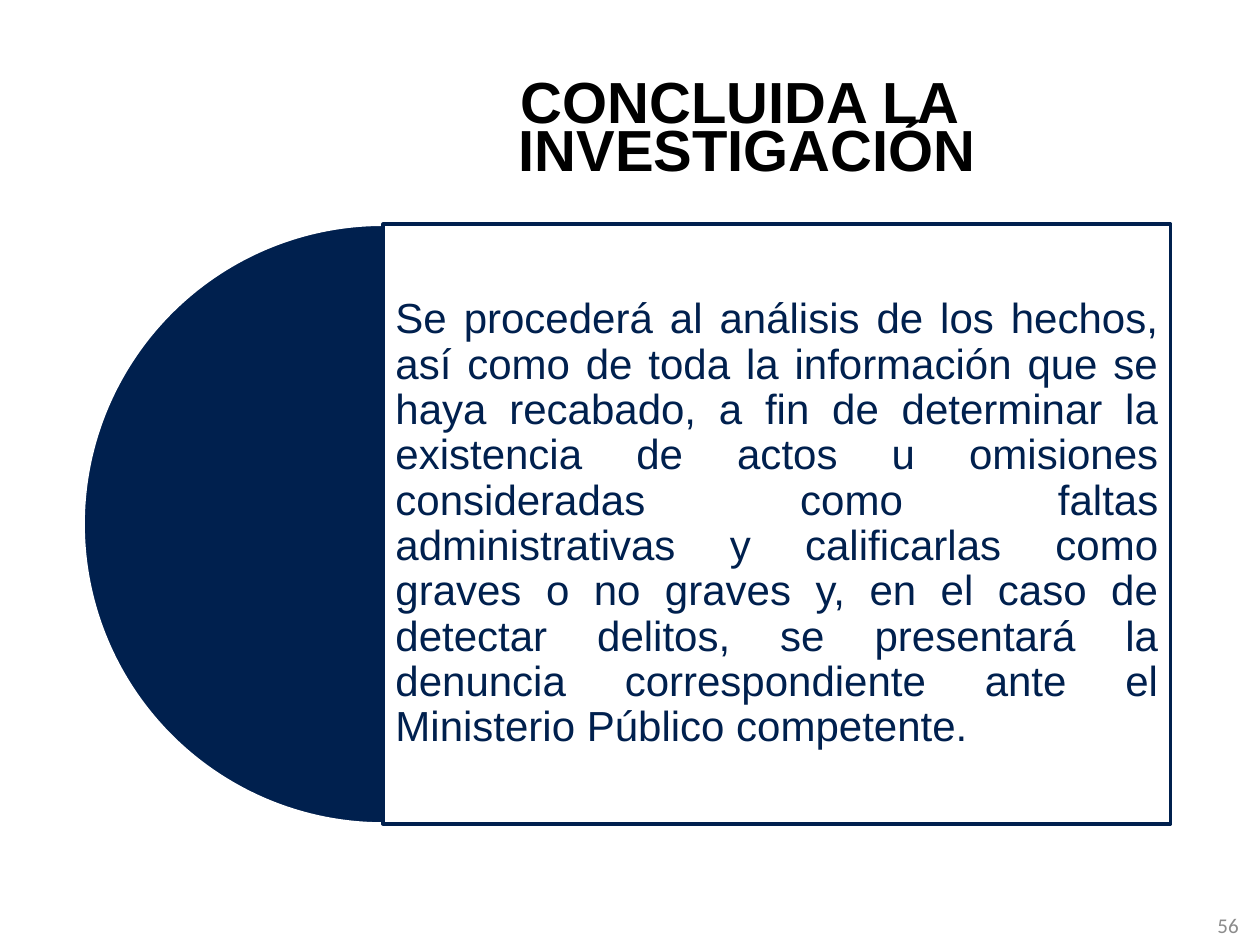
import dataclasses

import pptx
import pptx.dml.color
import pptx.enum.shapes
import pptx.enum.text
import pptx.oxml
import pptx.oxml.ns
import pptx.util

ALIGN = pptx.enum.text.PP_ALIGN
ANCHOR = pptx.enum.text.MSO_ANCHOR
SHAPE = pptx.enum.shapes.MSO_SHAPE


@dataclasses.dataclass(frozen=True)
class Theme:
    navy: str = "00204E"
    white: str = "FFFFFF"
    black: str = "000000"
    grey: str = "8C8C8C"
    font: str = "Arial"
    number_font: str = "Calibri"
    title_size: float = 33.1
    body_size: float = 24
    number_size: float = 12
    outline: float = 2


def rgb(value):
    return pptx.dml.color.RGBColor.from_string(value)


def write(frame, *lines, font, size, color, bold=False, align=ALIGN.LEFT,
          anchor=ANCHOR.MIDDLE, spacing=1.0, inset=0.1, bottom=None):
    """Fill a text frame with one paragraph per line."""
    frame.word_wrap = True
    frame.auto_size = pptx.enum.text.MSO_AUTO_SIZE.NONE
    frame.vertical_anchor = anchor
    frame.margin_left = frame.margin_right = pptx.util.Inches(inset)
    frame.margin_top = pptx.util.Inches(inset)
    frame.margin_bottom = pptx.util.Inches(inset if bottom is None else bottom)
    for index, line in enumerate(lines):
        paragraph = frame.add_paragraph() if index else frame.paragraphs[0]
        paragraph.alignment = align
        paragraph.line_spacing = spacing
        paragraph.space_before = pptx.util.Pt(0)
        run = paragraph.add_run()
        run.text = line
        run.font.name = font
        run.font.size = pptx.util.Pt(size)
        run.font.bold = bold
        run.font.color.rgb = rgb(color)


class SlideBuilder:
    """Holds the style and the slide; boxes are shares of the slide's size."""

    def __init__(self, deck, theme):
        self.deck = deck
        self.theme = theme
        self.slide = deck.slides.add_slide(deck.slide_layouts[5])

    def place(self, box):
        width, height = self.deck.slide_width, self.deck.slide_height
        return [round(share * side)
                for share, side in zip(box, (width, height) * 2)]

    def title(self, box, *lines):
        heading = self.slide.shapes.title
        heading.left, heading.top, heading.width, heading.height = self.place(box)
        write(heading.text_frame, *lines, font=self.theme.font,
              size=self.theme.title_size, color=self.theme.black, bold=True,
              align=ALIGN.CENTER, anchor=ANCHOR.BOTTOM, spacing=0.7, bottom=0.5)

    def shape(self, kind, box, fill, line, opacity=100):
        item = self.slide.shapes.add_shape(kind, *self.place(box))
        item.shadow.inherit = False
        item.fill.solid()
        item.fill.fore_color.rgb = rgb(fill)
        item.line.color.rgb = rgb(line)
        item.line.width = pptx.util.Pt(self.theme.outline)
        if opacity < 100:
            color = item.fill._xPr.find(".//" + pptx.oxml.ns.qn("a:srgbClr"))
            color.append(pptx.oxml.parse_xml(
                f'<a:alpha {pptx.oxml.ns.nsdecls("a")} val="{opacity * 1000}"/>'))
        return item

    def half_disc(self, box):
        disc = self.shape(SHAPE.PIE, box, self.theme.navy, self.theme.white)
        # Angles from 90 to 270 degrees keep the left half
        disc.adjustments[0], disc.adjustments[1] = 54, 162

    def panel(self, box, text):
        panel = self.shape(SHAPE.RECTANGLE, box, self.theme.white,
                           self.theme.navy, opacity=90)
        write(panel.text_frame, text, font=self.theme.font,
              size=self.theme.body_size, color=self.theme.navy,
              align=ALIGN.JUSTIFY, spacing=0.9)

    def page_number(self, box, text):
        number = self.slide.shapes.add_textbox(*self.place(box))
        write(number.text_frame, text, font=self.theme.number_font,
              size=self.theme.number_size, color=self.theme.grey,
              align=ALIGN.RIGHT, inset=0.1, bottom=0.1)


def main():
    deck = pptx.Presentation()
    deck.slide_width = pptx.util.Inches(10)
    deck.slide_height = pptx.util.Inches(7.5)
    builder = SlideBuilder(deck, Theme())

    # Page number and heading
    builder.page_number((0.892, 7.19 / 7.5, 0.101, 0.31 / 7.5), "56")
    builder.title((-0.051, 0.49 / 7.5, 1.288, 1.45 / 7.5),
                  "CONCLUIDA LA ", "INVESTIGACIÓN")

    # The panel starts at the centre of the disc and shares its height
    left, top, diameter = 0.066, 1.78 / 7.5, 0.476
    height = diameter * deck.slide_width / deck.slide_height
    builder.half_disc((left, top, diameter, height))
    builder.panel(
        (left + diameter / 2, top, 0.625, height),
        "Se procederá al análisis de los hechos, así como de toda la "
        "información que se haya recabado, a fin de determinar la existencia "
        "de actos u omisiones consideradas como faltas administrativas y "
        "calificarlas como graves o no graves y, en el caso de detectar "
        "delitos, se presentará la denuncia correspondiente ante el "
        "Ministerio Público competente.")

    deck.save("out.pptx")


if __name__ == "__main__":
    main()
